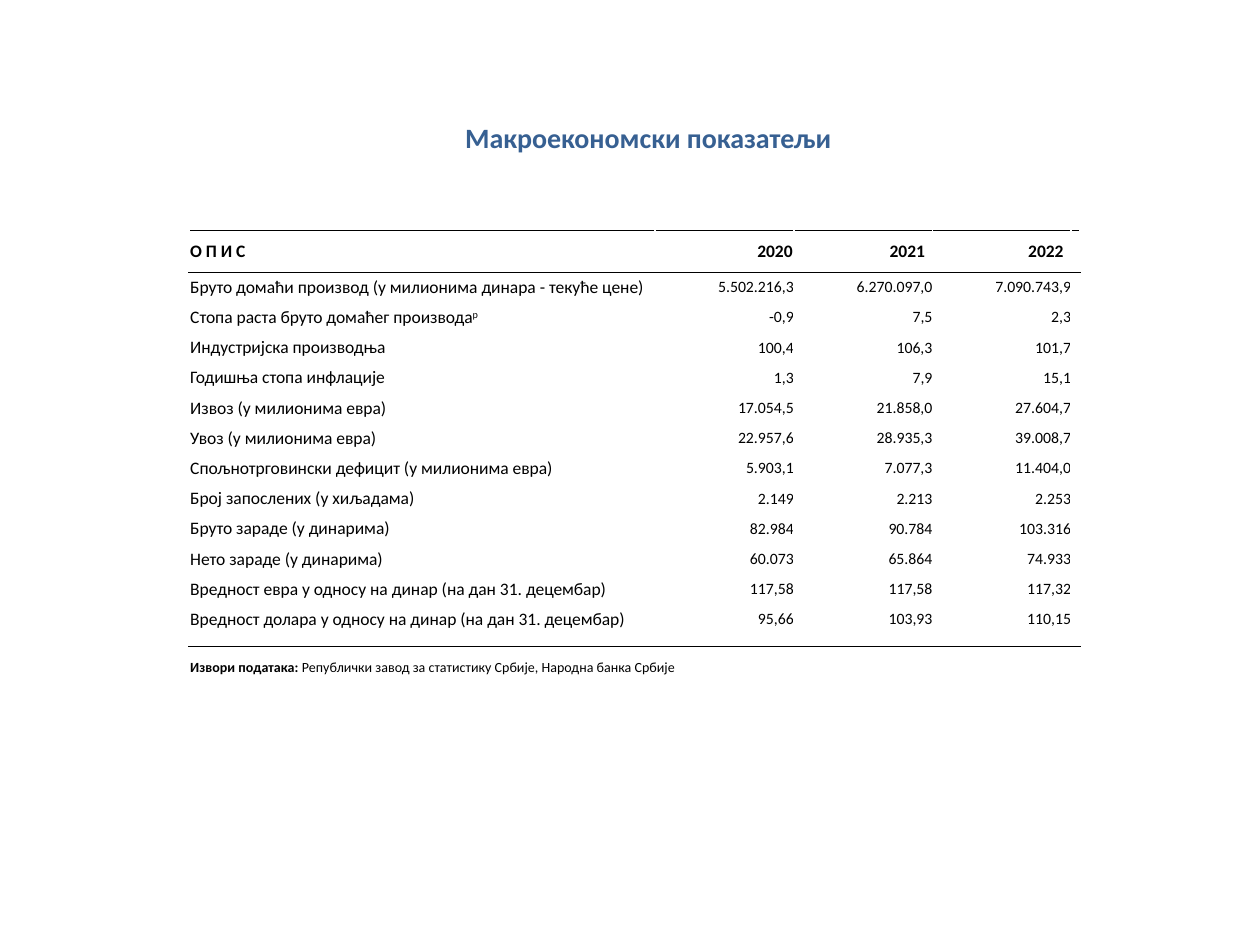
from lxml.etree import SubElement
from pptx import Presentation
from pptx.dml.color import RGBColor
from pptx.enum.text import MSO_ANCHOR, PP_ALIGN
from pptx.oxml import parse_xml
from pptx.oxml.ns import nsdecls, qn
from pptx.util import Inches, Pt

COLORS = {"title": "376092", "text": "000000", "paper": "FFFFFF"}
HEADINGS = ["О П И С", "2020", "2021", "2022"]
INDICATORS = [
    ("Бруто домаћи производ (у милионима динара - текуће цене)", "5.502.216,3", "6.270.097,0", "7.090.743,9"),
    ("Стопа раста бруто домаћег производа", "-0,9", "7,5", "2,3"),
    ("Индустријска производња", "100,4", "106,3", "101,7"),
    ("Годишња стопа инфлације", "1,3", "7,9", "15,1"),
    ("Извоз (у милионима евра)", "17.054,5", "21.858,0", "27.604,7"),
    ("Увоз (у милионима евра)", "22.957,6", "28.935,3", "39.008,7"),
    ("Cпољнотрговински дефицит (у милионима евра)", "5.903,1", "7.077,3", "11.404,0"),
    ("Број запослених (у хиљадама)", "2.149", "2.213", "2.253"),
    ("Бруто зараде (у динарима)", "82.984", "90.784", "103.316"),
    ("Нето зараде (у динарима)", "60.073", "65.864", "74.933"),
    ("Вредност евра у односу на динар (на дан 31. децембар)", "117,58", "117,58", "117,32"),
    ("Вредност долара у односу на динар (на дан 31. децембар)", "95,66", "103,93", "110,15"),
]
GROWTH_ROW = 2
SPACER_ROW = len(INDICATORS) + 1
SOURCE_ROW = SPACER_ROW + 1
COLUMN_WIDTHS = [3.7, 1.1, 1.1, 1.1, 0.07]
ROW_HEIGHTS = [0.33] + [0.24] * len(INDICATORS) + [0.09, 0.28]
HEADING_INSETS = [0.01, 0.01, 0.06, 0.06]
RULES = {0: ("lnT", "lnB"), 1: ("lnT",), SPACER_ROW: ("lnB",), SOURCE_ROW: ("lnT",)}


def write(paragraph, text, size, bold=False, color="text"):
    run = paragraph.add_run()
    run.text = text
    for name, value in {"name": "Calibri", "size": Pt(size), "bold": bold}.items():
        setattr(run.font, name, value)
    run.font.color.rgb = RGBColor.from_string(COLORS[color])
    return run


def rule(cell, sides):
    for position, side in enumerate(sides):
        cell._tc.get_or_add_tcPr().insert(position, parse_xml(
            f'<a:{side} {nsdecls("a")} w="6350"><a:solidFill>'
            f'<a:srgbClr val="{COLORS["text"]}"/></a:solidFill></a:{side}>'))


deck = Presentation()
deck.slide_width, deck.slide_height = Inches(10), Inches(7.5)
slide = deck.slides.add_slide(deck.slide_layouts[5])

heading = slide.shapes.title
for name, value in {"left": 0.75, "top": 0.88, "width": 8.79, "height": 0.42}.items():
    setattr(heading, name, Inches(value))
heading.text_frame.vertical_anchor = MSO_ANCHOR.MIDDLE
heading.text_frame.paragraphs[0].alignment = PP_ALIGN.CENTER
write(heading.text_frame.paragraphs[0], "Макроекономски показатељи", 16, True, "title")

indicators = slide.shapes.add_table(
    len(ROW_HEIGHTS), len(COLUMN_WIDTHS), Inches(1.5), Inches(1.83),
    Inches(sum(COLUMN_WIDTHS)), Inches(sum(ROW_HEIGHTS))).table
indicators.first_row = indicators.horz_banding = False
for column, width in zip(indicators.columns, COLUMN_WIDTHS):
    column.width = Inches(width)
for row, height in zip(indicators.rows, ROW_HEIGHTS):
    row.height = Inches(height)

contents = [HEADINGS, *INDICATORS]
for row_index, row in enumerate(indicators.rows):
    for column_index, cell in enumerate(row.cells):
        inset = Inches(0.01 if column_index == 0 else 0)
        for name, value in {"margin_left": inset, "margin_right": 0, "margin_top": 0,
                            "margin_bottom": 0, "vertical_anchor": MSO_ANCHOR.MIDDLE}.items():
            setattr(cell, name, value)
        cell.fill.solid()
        cell.fill.fore_color.rgb = RGBColor.from_string(COLORS["paper"])
        rule(cell, RULES.get(row_index, ()))
        paragraph = cell.text_frame.paragraphs[0]
        if row_index < SPACER_ROW and column_index < len(HEADINGS):
            is_heading = row_index == 0
            if column_index:
                paragraph.alignment = PP_ALIGN.RIGHT
            if is_heading:
                cell.margin_right = Inches(HEADING_INSETS[column_index])
            size = 10 if is_heading or column_index == 0 else 9
            write(paragraph, contents[row_index][column_index], size, is_heading)
        elif row_index < SOURCE_ROW or column_index:
            SubElement(paragraph._p, qn("a:endParaRPr")).set("sz", "100")

growth_label = indicators.cell(GROWTH_ROW, 0).text_frame.paragraphs[0]
write(growth_label, "р", 10)._r.get_or_add_rPr().set("baseline", "30000")

source = indicators.cell(SOURCE_ROW, 0)
source.merge(indicators.cell(SOURCE_ROW, len(COLUMN_WIDTHS) - 1))
source.margin_top = Inches(0.07)
source_line = source.text_frame.paragraphs[0]
write(source_line, "Извори података:", 8, True)
write(source_line, " Републички завод за статистику Србије, Народна банка Србије", 8)

deck.save("out.pptx")
